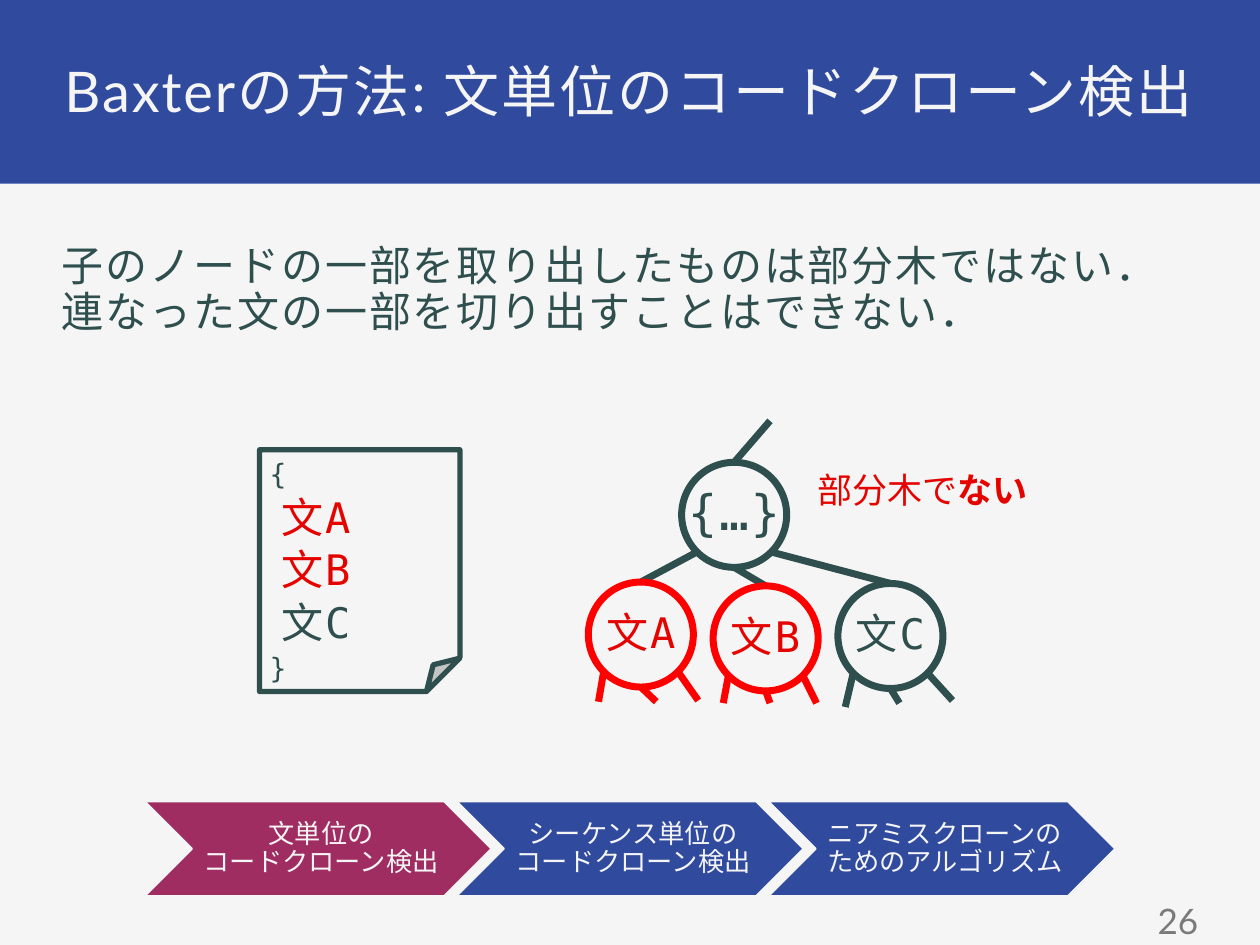
from lxml import etree
from pptx import Presentation
from pptx.dml.color import RGBColor
from pptx.enum.shapes import MSO_CONNECTOR, MSO_SHAPE
from pptx.enum.text import MSO_ANCHOR, MSO_AUTO_SIZE, PP_ALIGN
from pptx.oxml.ns import qn
from pptx.util import Pt

STRAIGHT = MSO_CONNECTOR.STRAIGHT
TOP, MIDDLE = MSO_ANCHOR.TOP, MSO_ANCHOR.MIDDLE
LEFT, CENTER, RIGHT, JUSTIFY = PP_ALIGN.LEFT, PP_ALIGN.CENTER, PP_ALIGN.RIGHT, PP_ALIGN.JUSTIFY

COLORS = {"paper": "F5F5F5", "blue": "304A9E", "plum": "9F2D62", "slate": "2F4F4F",
          "red": "FF0000", "text_red": "E50300", "gray": "7A7A7A"}
SANS, MONO = "Lato", "DejaVu Sans Mono"

# Content
TITLE = "Baxterの方法: 文単位のコードクローン検出"
BODY = ["子のノードの一部を取り出したものは部分木ではない．",
        "連なった文の一部を切り出すことはできない．"]
PAGE_NUMBER = "26"
NOTE = [("部分木で", False), ("ない", True)]
# Code lines: text, size, colour, indent
CODE = [("{", 16, "slate", 0), ("文A", 24, "text_red", 6.5), ("文B", 24, "text_red", 6.5),
        ("文C", 24, "slate", 6.5), ("}", 16, "slate", 0)]
STEPS = [(["文単位の", "コードクローン検出"], "plum"),
         (["シーケンス単位の", "コードクローン検出"], "blue"),
         (["ニアミスクローンのためのアルゴリズム"], "blue")]
# Tree leaves: text, outline, text colour, top, tips of the three stubs below
LEAVES = [("文A", "red", "text_red", 332.6, [(342, 401), (375, 401), (399, 400.3)]),
          ("文B", "red", "text_red", 334.8, [(413.3, 401.8), (440, 401.8), (466.6, 401.8)]),
          ("文C", "slate", "slate", 333.4, [(483, 404), (514, 401.8), (544.3, 400.3)])]

# Layout in points
NODE = 60
ROOT_LEFT, ROOT_TOP = 389.5, 264.2
LEAF_LEFT, LEAF_STEP = 336.2, 71.3
STEP_LEFT, STEP_PITCH = 82.8, 178.2
DIAGONAL = 0.146  # where a 45 degree ray meets the circle, as a share of its box


def rgb(name):
    return RGBColor.from_string(COLORS[name])


def place(shape, left, top, width, height):
    shape.left, shape.top, shape.width, shape.height = map(Pt, (left, top, width, height))


def set_frame(shape, insets, anchor=TOP, wrap=True):
    frame = shape.text_frame
    frame.auto_size = MSO_AUTO_SIZE.NONE
    frame.word_wrap = wrap
    frame.vertical_anchor = anchor
    frame.margin_left, frame.margin_top, frame.margin_right, frame.margin_bottom = map(Pt, insets)
    return frame


def set_para(para, align=LEFT, line=0.9, before=0, after=0):
    para.alignment, para.line_spacing = align, line
    para.space_before, para.space_after = Pt(before), Pt(after)


def add_span(para, text, size, color, font=SANS, spacing=0, bold=False):
    span = para.add_run()
    span.text = text
    span.font.size, span.font.name, span.font.bold = Pt(size), font, bold
    span.font.color.rgb = rgb(color)
    if spacing:
        span.font._element.set("spc", str(round(spacing * 100)))


def add_lines(para, lines, *style):
    for i, line in enumerate(lines):
        if i:
            para.add_line_break()
        add_span(para, line, *style)


def add_box(kind, left, top, width, height, fill, line=None, weight=1):
    box = page.shapes.add_shape(kind, *map(Pt, (left, top, width, height)))
    box.shadow.inherit = False
    box.fill.solid()
    box.fill.fore_color.rgb = rgb(fill)
    if line:
        box.line.color.rgb = rgb(line)
        box.line.width = Pt(weight)
    else:
        box.line.fill.background()
    return box


def add_line(start, end, color):
    line = page.shapes.add_connector(STRAIGHT, *map(Pt, (*start, *end)))
    line.line.color.rgb = rgb(color)
    line.line.width = Pt(4)
    etree.SubElement(line._element.spPr, qn("a:effectLst"))
    return line


def add_node(left, top, text, size, outline, color):
    node = add_box(MSO_SHAPE.OVAL, left, top, NODE, NODE, "paper", outline, 4)
    para = set_frame(node, [5.8] * 4, MIDDLE, wrap=False).paragraphs[0]
    set_para(para, CENTER, before=3, after=1)
    add_span(para, text, size, color, MONO, 1.1)
    return node


def lower_points(left, top):
    """Lower left, bottom and lower right points of a node."""
    near, far = NODE * DIAGONAL, NODE * (1 - DIAGONAL)
    return [(left + near, top + far), (left + NODE / 2, top + NODE), (left + far, top + far)]


deck = Presentation()
deck.slide_width, deck.slide_height = Pt(720), Pt(540)
page = deck.slides.add_slide(deck.slide_layouts[1])
page.background.fill.solid()
page.background.fill.fore_color.rgb = rgb("paper")

# Title on its band
band = add_box(MSO_SHAPE.RECTANGLE, -1.5, -1.5, 723, 106.5, "blue")
page.shapes._spTree.insert(2, band._element)
title = page.shapes.title
place(title, 31, 31, 657.5, 42.5)
para = set_frame(title, (5.8, 5.8, 5.8, 4.3)).paragraphs[0]
set_para(para, JUSTIFY, before=16)
add_span(para, TITLE, 32, "paper", SANS, 1.1)

# Body
body = page.placeholders[1]
place(body, 31, 136, 657.5, 373)
para = set_frame(body, [4.3] * 4).paragraphs[0]
set_para(para, before=14)
props = para._p.get_or_add_pPr()
props.set("marL", "0")
props.set("indent", "0")
etree.SubElement(props, qn("a:buNone"))
add_lines(para, BODY, 24, "slate", SANS, 1.1)

# Page number
number = page.shapes.add_textbox(*map(Pt, (527, 512, 162, 28)))
para = set_frame(number, [4.3] * 4, MIDDLE).paragraphs[0]
para.alignment = RIGHT
add_span(para, PAGE_NUMBER, 20, "gray")

# Process steps
for i, (lines, fill) in enumerate(STEPS):
    step = add_box(MSO_SHAPE.CHEVRON, STEP_LEFT + i * STEP_PITCH, 458, 198, 54, fill, "paper")
    para = set_frame(step, (5, 1.5, 1.5, 1.5), MIDDLE).paragraphs[0]
    set_para(para, CENTER)
    add_lines(para, lines, 15, "paper")

# Source code sheet
sheet = add_box(MSO_SHAPE.FOLDED_CORNER, 148.3, 257, 114.5, 138.2, "paper", "slate", 3)
frame = set_frame(sheet, [5.8] * 4, wrap=False)
for i, (text, size, color, indent) in enumerate(CODE):
    para = frame.add_paragraph() if i else frame.paragraphs[0]
    set_para(para, before=3, after=1)
    para._p.get_or_add_pPr().set("marL", str(Pt(indent)))
    add_span(para, text, size, color, MONO, 1.1)

# Syntax tree: branches first, nodes over them
leaf_lefts = [LEAF_LEFT + i * LEAF_STEP for i in range(len(LEAVES))]
branches = [add_line(start, (left + NODE / 2, leaf[3]), "slate")
            for start, left, leaf in zip(lower_points(ROOT_LEFT, ROOT_TOP), leaf_lefts, LEAVES)]
add_node(ROOT_LEFT, ROOT_TOP, "{…}", 28, "slate", "slate")
for branch, left, (text, outline, color, top, tips) in zip(branches, leaf_lefts, LEAVES):
    leaf = add_node(left, top, text, 24, outline, color)
    branch.end_connect(leaf, 0)
    for start, tip in zip(lower_points(left, top), tips):
        add_line(start, tip, outline)
add_line((440, 240.5), (ROOT_LEFT + NODE / 2, ROOT_TOP), "slate")

# Note beside the root
note = page.shapes.add_textbox(*map(Pt, (460, 264.2, 135.5, 31.5)))
para = set_frame(note, (7.2, 3.6, 7.2, 3.6), wrap=False).paragraphs[0]
for text, bold in NOTE:
    add_span(para, text, 20, "text_red", bold=bold)

deck.save("out.pptx")
